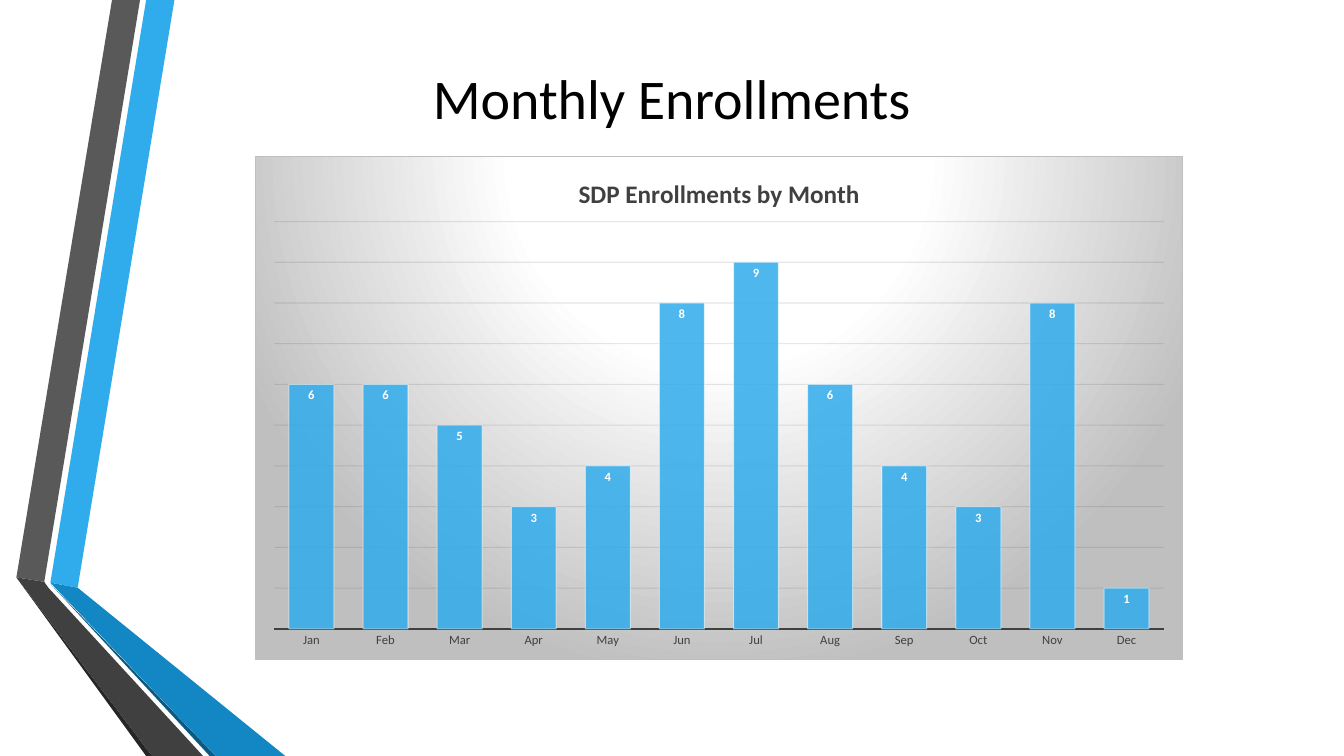
from dataclasses import dataclass

from lxml import etree
from pptx import Presentation
from pptx.chart.data import CategoryChartData
from pptx.dml.color import RGBColor
from pptx.enum.chart import XL_CHART_TYPE, XL_LABEL_POSITION, XL_TICK_MARK
from pptx.enum.text import MSO_ANCHOR, PP_ALIGN
from pptx.oxml import parse_xml
from pptx.oxml.ns import nsdecls, qn
from pptx.util import Pt

COLUMN = XL_CHART_TYPE.COLUMN_CLUSTERED
INSIDE_END = XL_LABEL_POSITION.INSIDE_END
NO_TICK = XL_TICK_MARK.NONE
MIDDLE = MSO_ANCHOR.MIDDLE
CENTER = PP_ALIGN.CENTER


@dataclass(frozen=True)
class Theme:
    """Colours, font and type sizes."""
    font: str = "Calibri"
    black: str = "000000"
    white: str = "FFFFFF"
    silver: str = "BFBFBF"
    grid: str = "0D0D0D"
    ink: str = "262626"
    charcoal: str = "404040"
    grey: str = "595959"
    blue: str = "30ACEC"
    deep_blue: str = "1287C3"
    navy: str = "0C5A82"
    title: int = 40
    chart_title: int = 18
    body: int = 10
    label: int = 9


class Deck:
    """Style and current slide, with a method for each kind of element."""

    def __init__(self, prs, theme):
        """Add a title-only slide to the presentation."""
        self.theme = theme
        self.s = prs.slides.add_slide(prs.slide_layouts[5])

    def style(self, font, size, color, bold=False):
        """Format a font."""
        font.name = self.theme.font
        font.size = Pt(size)
        font.bold = bold
        font.color.rgb = RGBColor.from_string(color)

    def line(self, line, color, width):
        """Format a line."""
        line.color.rgb = RGBColor.from_string(color)
        line.width = Pt(width)

    def alpha(self, root, query, percent):
        """Set the opacity of the colours that the query finds."""
        for color in root.xpath(query):
            etree.SubElement(color, qn("a:alpha")).set("val", str(percent * 1000))

    def ribbon(self, color, points):
        """Draw a closed, filled outline."""
        start, *rest = [(Pt(x), Pt(y)) for x, y in points]
        builder = self.s.shapes.build_freeform(*start)
        builder.add_line_segments(rest, close=True)
        sp = builder.convert_to_shape()
        sp.shadow.inherit = False
        sp.fill.solid()
        sp.fill.fore_color.rgb = RGBColor.from_string(color)
        sp.line.fill.background()

    def title(self, text, left, top, width, height):
        """Place the slide title in front of the ribbons."""
        sp = self.s.shapes.title
        sp.element.getparent().append(sp.element)
        sp.left, sp.top, sp.width, sp.height = Pt(left), Pt(top), Pt(width), Pt(height)
        tf = sp.text_frame
        tf.text = text
        tf.vertical_anchor = MIDDLE
        p = tf.paragraphs[0]
        p.alignment = CENTER
        self.style(p.runs[0].font, self.theme.title, self.theme.black)

    def chart(self, heading, values, left, top, width, height):
        """Add a column chart with value labels."""
        t = self.theme
        data = CategoryChartData()
        data.categories = list(values)
        data.add_series("Series 1", list(values.values()))
        chart = self.s.shapes.add_chart(
            COLUMN, Pt(left), Pt(top), Pt(width), Pt(height), data).chart
        self.style(chart.font, t.body, t.black)
        chart.has_legend = False
        chart.has_title = True
        tf = chart.chart_title.text_frame
        tf.text = heading
        self.style(tf.paragraphs[0].runs[0].font, t.chart_title, t.charcoal, True)
        chart.chart_title.include_in_layout = False

        months = chart.category_axis
        months.major_tick_mark = NO_TICK
        self.style(months.tick_labels.font, t.label, t.charcoal)
        self.line(months.format.line, t.charcoal, 1.5)

        counts = chart.value_axis
        counts.minimum_scale, counts.maximum_scale, counts.major_unit = 0, 10, 1
        counts.visible = False
        self.line(counts.major_gridlines.format.line, t.grid, 0.75)

        plot = chart.plots[0]
        plot.gap_width = 65
        plot.vary_by_categories = False
        series = plot.series[0]
        series.format.fill.solid()
        series.format.fill.fore_color.rgb = RGBColor.from_string(t.blue)
        self.line(series.format.line, t.white, 0.75)
        labels = series.data_labels
        labels.show_value = True
        labels.position = INSIDE_END
        self.style(labels.font, t.label, t.white, True)

        root = chart.element
        self.alpha(root, ".//c:ser/c:spPr/a:solidFill/a:srgbClr", 85)
        self.alpha(root, ".//c:ser/c:spPr/a:ln//a:srgbClr", 50)
        self.alpha(root, ".//c:majorGridlines//a:srgbClr", 10)
        self.chart_frame(root)

    def chart_frame(self, root):
        """Give the chart its plot layout, radial background and border."""
        t = self.theme
        plot_area = root.xpath(".//c:plotArea")[0]
        for layout in plot_area.findall(qn("c:layout")):
            plot_area.remove(layout)
        plot_area.insert(0, parse_xml(
            f'<c:layout {nsdecls("c")}><c:manualLayout>'
            '<c:layoutTarget val="inner"/><c:xMode val="edge"/><c:yMode val="edge"/>'
            '<c:x val="0.02"/><c:y val="0.13"/><c:w val="0.96"/><c:h val="0.81"/>'
            '</c:manualLayout></c:layout>'))
        stops = "".join(
            f'<a:gs pos="{pos * 1000}"><a:srgbClr val="{color}"/></a:gs>'
            for pos, color in ((0, t.white), (39, t.white), (100, t.silver)))
        root.find(qn("c:chart")).addnext(parse_xml(
            f'<c:spPr {nsdecls("c", "a")}><a:gradFill><a:gsLst>{stops}</a:gsLst>'
            '<a:path path="circle">'
            '<a:fillToRect l="50000" t="-80000" r="50000" b="180000"/></a:path>'
            f'</a:gradFill><a:ln w="{Pt(0.75)}"><a:solidFill>'
            f'<a:srgbClr val="{t.silver}"/></a:solidFill></a:ln></c:spPr>'))


def main():
    """Build the enrollment slide."""
    prs = Presentation()
    prs.slide_width, prs.slide_height = Pt(960), Pt(540)
    t = Theme()
    deck = Deck(prs, t)
    ribbons = (
        (t.blue, ((36, 416.2), (55.5, 419.8), (124.6, 0), (104.4, 0))),
        (t.grey, ((100, 0), (80, 0), (11.7, 412.4), (31.6, 415.6))),
        (t.ink, ((11.7, 412.4), (104.4, 540), (108.7, 540))),
        (t.navy, ((36, 417), (149.8, 540), (154.1, 540))),
        (t.deep_blue, ((36, 416.2), (154.1, 540), (203.8, 540), (55.5, 419.8))),
        (t.charcoal, ((145.1, 540), (34.6, 419.8), (31.6, 415.6),
                      (11.7, 412.4), (108.7, 540))),
    )
    for color, points in ribbons:
        deck.ribbon(color, points)
    deck.title("Monthly Enrollments", 66, 27, 827.5, 85)
    enrollments = {"Jan": 6, "Feb": 6, "Mar": 5, "Apr": 3, "May": 4, "Jun": 8,
                   "Jul": 9, "Aug": 6, "Sep": 4, "Oct": 3, "Nov": 8, "Dec": 1}
    deck.chart("SDP Enrollments by Month", enrollments, 182.4, 111.2, 662.4, 360)
    prs.save("out.pptx")


if __name__ == "__main__":
    main()
